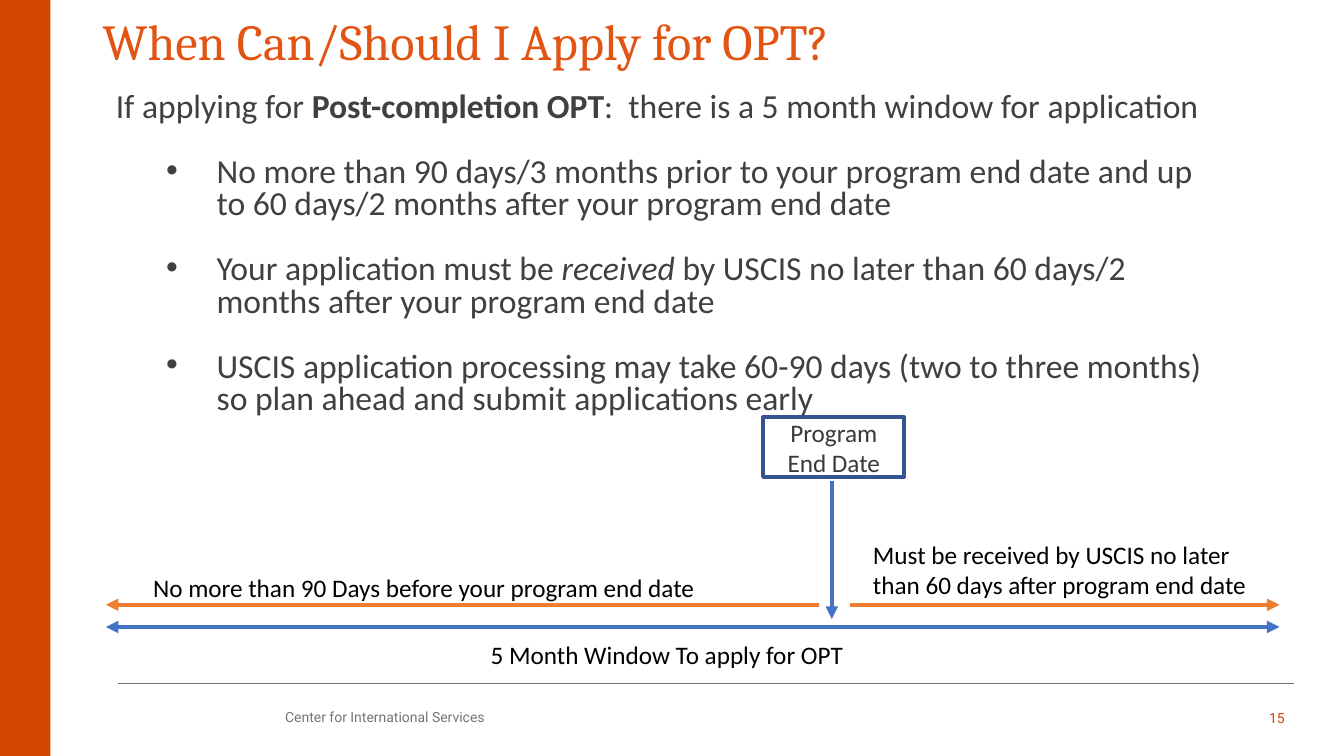
from pptx import Presentation, util as u
from pptx.dml.color import RGBColor
from pptx.enum import shapes, text
from pptx.oxml.ns import qn
from lxml import etree

PX = 9144
RUST = RGBColor(0xD4, 0x45, 0x00)
TITLE = RGBColor(0xE2, 0x54, 0x14)
GRAY = RGBColor(0x6F, 0x77, 0x7D)
BODY = RGBColor(0x40, 0x40, 0x40)
BLACK = RGBColor(0, 0, 0)
DARK = RGBColor(0x3B, 0x38, 0x38)
BLUE = RGBColor(0x44, 0x72, 0xC4)
NAVY = RGBColor(0x32, 0x54, 0x91)
AMBER = RGBColor(0xED, 0x7D, 0x31)

deck = Presentation()
deck.slide_width, deck.slide_height = 1333 * PX, 750 * PX
slide = deck.slides.add_slide(deck.slide_layouts[6])


def label(spot, words, size, face, color, align=text.PP_ALIGN.LEFT, anchor=text.MSO_ANCHOR.TOP):
    frame = slide.shapes.add_textbox(*[n * PX for n in spot]).text_frame
    frame.word_wrap = True
    frame.vertical_anchor = anchor
    frame.text = words
    for para in frame.paragraphs:
        para.alignment = align
        para.font.size = u.Pt(size)
        para.font.name = face
        para.font.color.rgb = color
    return frame


def line(ends, color, width, tips=()):
    link = slide.shapes.add_connector(shapes.MSO_CONNECTOR.STRAIGHT, *[n * PX for n in ends])
    link.line.color.rgb = color
    link.line.width = u.Pt(width)
    for tip in tips:
        etree.SubElement(link.line._get_or_add_ln(), qn("a:" + tip), type="triangle")
    etree.SubElement(link._element.spPr, qn("a:effectLst"))


band = slide.shapes.add_shape(shapes.MSO_SHAPE.RECTANGLE, 0, 0, 50 * PX, 750 * PX)
band.shadow.inherit = False
band.fill.solid()
band.fill.fore_color.rgb = RUST
band.line.fill.background()

line((117, 678, 1283, 678), GRAY, 0.5)
label((1217, 692, 67, 40), "15", 10, "Roboto", RUST, text.PP_ALIGN.RIGHT, text.MSO_ANCHOR.MIDDLE)
label((92, 5, 1099, 92), "When Can/Should I Apply for OPT?", 36, "Cambria", TITLE)
foot = label((273, 692, 944, 40), "Center for International Services", 10, "Roboto", GRAY,
             anchor=text.MSO_ANCHOR.MIDDLE)
foot.paragraphs[0].line_spacing = 0.9

points = [
    ["If applying for ", "Post-completion OPT", ":  there is a 5 month window for application"],
    ["No more than 90 days/3 months prior to your program end date and up to 60 days/2 months "
     "after your program end date"],
    ["Your application must be ", "received", " by USCIS no later than 60 days/2 months "
     "after your program end date"],
    ["USCIS application processing may take 60-90 days (two to three months) so plan ahead "
     "and submit applications early"],
]
main = slide.shapes.add_textbox(105 * PX, 87 * PX, 1112 * PX, 334 * PX).text_frame
main.word_wrap = True
for i, parts in enumerate(points):
    para = main.paragraphs[0] if i == 0 else main.add_paragraph()
    para.line_spacing = 0.8
    if i:
        para.level = 1
        para.space_before = u.Pt(23.4)
        props = para._p.get_or_add_pPr()
        props.set("marL", str(100 * PX))
        props.set("indent", str(-50 * PX))
        etree.SubElement(props, qn("a:buFont"), typeface="Arial")
        etree.SubElement(props, qn("a:buChar"), char="•")
    para.font.size = u.Pt(24)
    para.font.name = "Calibri"
    para.font.color.rgb = BODY
    for part in parts:
        run = para.add_run()
        run.text = part
        run.font.size = u.Pt(24)
        run.font.name = "Calibri"
        run.font.color.rgb = BODY
main.paragraphs[0].runs[1].font.bold = True
main.paragraphs[2].runs[1].font.italic = True

line((825, 477, 825, 614), BLUE, 3, ["tailEnd"])
box = slide.shapes.add_shape(shapes.MSO_SHAPE.RECTANGLE, 757 * PX, 414 * PX, 140 * PX, 59 * PX)
box.shadow.inherit = False
box.fill.background()
box.line.color.rgb = NAVY
box.line.width = u.Pt(3)
box.text_frame.text = "Program End Date"
box.text_frame.vertical_anchor = text.MSO_ANCHOR.MIDDLE
para = box.text_frame.paragraphs[0]
para.alignment = text.PP_ALIGN.CENTER
para.font.size = u.Pt(18)
para.font.name = "Calibri"
para.font.color.rgb = DARK

line((812, 600, 105, 600), AMBER, 3, ["tailEnd"])
line((843, 600, 1269, 600), AMBER, 3, ["tailEnd"])
line((105, 622, 1269, 622), BLUE, 3, ["headEnd", "tailEnd"])

for spot, words, align in [
    ((142, 563, 566, 40), "No more than 90 Days before your program end date", text.PP_ALIGN.LEFT),
    ((856, 530, 400, 71), "Must be received by USCIS no later than 60 days after program end date",
     text.PP_ALIGN.LEFT),
    ((154, 629, 1015, 41), "5 Month Window To apply for OPT", text.PP_ALIGN.CENTER),
]:
    label(spot, words, 18, "Calibri", BLACK, align)

deck.save("out.pptx")
